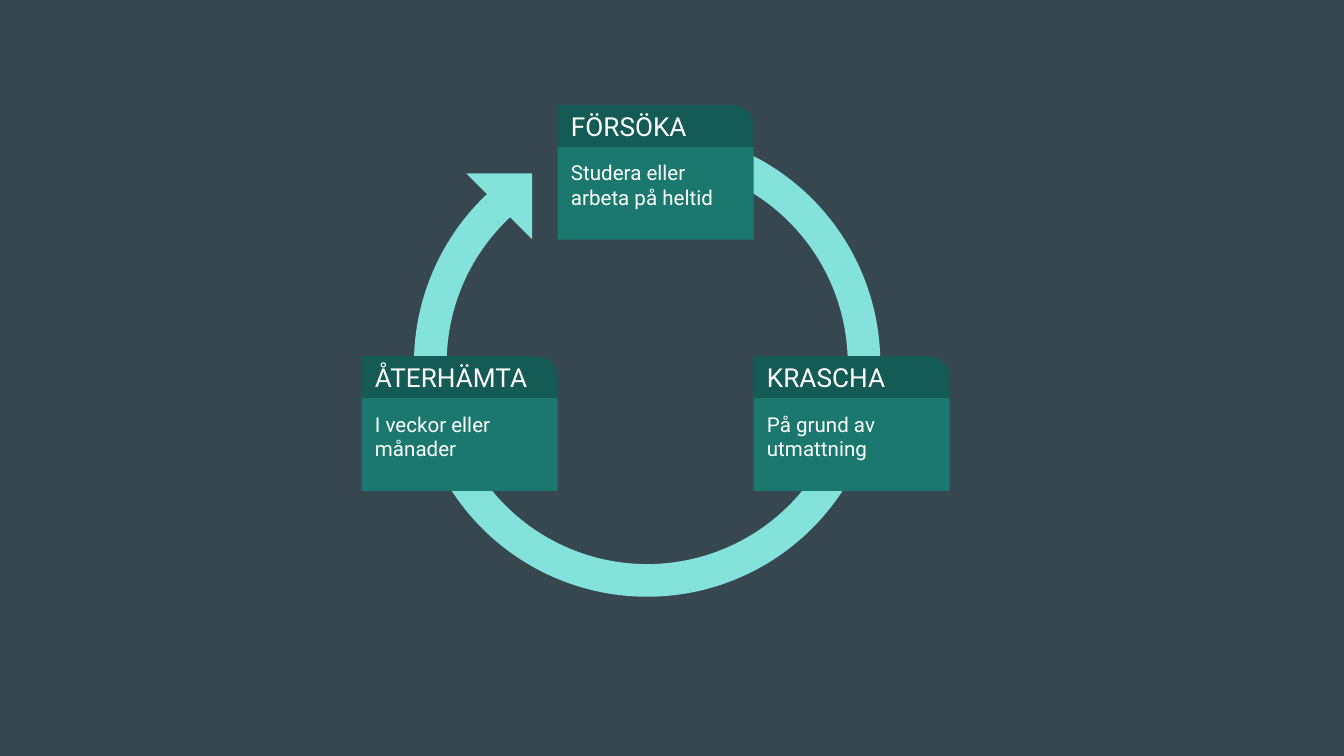
import pptx
import pptx.dml.color
import pptx.enum.shapes
import pptx.enum.text
import pptx.util

RGBColor = pptx.dml.color.RGBColor
Inches = pptx.util.Inches
SHAPES = pptx.enum.shapes.MSO_SHAPE
ANCHOR = pptx.enum.text.MSO_ANCHOR

SLATE = RGBColor(0x37, 0x47, 0x4F)
MINT = RGBColor(0x83, 0xE3, 0xDA)
TEAL = RGBColor(0x1B, 0x78, 0x6F)
DARK_TEAL = RGBColor(0x15, 0x5B, 0x55)
WHITE = RGBColor(0xFF, 0xFF, 0xFF)

FONT = "Roboto"
SLIDE_WIDTH = 10
SLIDE_HEIGHT = SLIDE_WIDTH * 9 / 16
MIDDLE_LEFT, GRID_TOP = 4.15, 0.78
CARD_WIDTH, ROW_STEP = SLIDE_WIDTH * 7 / 48, 1.87
HEADER_HEIGHT, BODY_HEIGHT = SLIDE_HEIGHT / 18, 0.69
RING_LEFT, RING_TOP, RING_SIZE = 3.08, 0.97, 3.47
HEAD_LEFT, HEAD_TOP, HEAD_SIZE = 3.47, 1.29, 0.49
ANGLE_UNIT = 0.6

CARDS = [
    ("KRASCHA", "På grund av utmattning", 1, 1),
    ("FÖRSÖKA", "Studera eller arbeta på heltid", 0, 0),
    ("ÅTERHÄMTA", "I veckor eller månader", -1, 1),
]


def add_filled_shape(group, kind, left, top, width, height, color):
    shape = group.shapes.add_shape(
        kind, Inches(left), Inches(top), Inches(width), Inches(height)
    )
    shape.shadow.inherit = False
    shape.fill.solid()
    shape.fill.fore_color.rgb = color
    shape.line.fill.background()
    return shape


def write_text(shape, text, *, size, anchor=ANCHOR.TOP, color=WHITE, margin=0.1):
    frame = shape.text_frame
    frame.word_wrap = True
    frame.vertical_anchor = anchor
    frame.margin_left = frame.margin_right = Inches(margin)
    frame.margin_top = frame.margin_bottom = Inches(margin)
    paragraph = frame.paragraphs[0]
    paragraph.alignment = pptx.enum.text.PP_ALIGN.LEFT
    run = paragraph.add_run()
    run.text = text
    run.font.name = FONT
    run.font.size = pptx.util.Pt(size)
    run.font.color.rgb = color


def add_cycle_arrow(slide):
    group = slide.shapes.add_group_shape()
    ring = add_filled_shape(
        group, SHAPES.BLOCK_ARC, RING_LEFT, RING_TOP, RING_SIZE, RING_SIZE, MINT
    )
    ring.adjustments[0] = 90 * ANGLE_UNIT
    ring.adjustments[1] = 50.21 * ANGLE_UNIT
    ring.adjustments[2] = 0.07
    head = add_filled_shape(
        group, SHAPES.RIGHT_TRIANGLE, HEAD_LEFT, HEAD_TOP, HEAD_SIZE, HEAD_SIZE, MINT
    )
    ring.rotation = head.rotation = 180


def add_card(slide, title, description, column, row):
    left = MIDDLE_LEFT + column * CARD_WIDTH
    top = GRID_TOP + row * ROW_STEP
    group = slide.shapes.add_group_shape()
    body = add_filled_shape(
        group, SHAPES.RECTANGLE, left, top + HEADER_HEIGHT, CARD_WIDTH, BODY_HEIGHT, TEAL
    )
    write_text(body, description, size=11)
    header = add_filled_shape(
        group, SHAPES.ROUND_1_RECTANGLE, left, top, CARD_WIDTH, HEADER_HEIGHT, DARK_TEAL
    )
    header.adjustments[0] = 0.5
    write_text(header, title, size=14, anchor=ANCHOR.MIDDLE)


def main():
    presentation = pptx.Presentation()
    presentation.slide_width = Inches(SLIDE_WIDTH)
    presentation.slide_height = Inches(SLIDE_HEIGHT)
    slide = presentation.slides.add_slide(presentation.slide_layouts[6])
    slide.background.fill.solid()
    slide.background.fill.fore_color.rgb = SLATE
    add_cycle_arrow(slide)
    for title, description, column, row in CARDS:
        add_card(slide, title, description, column, row)
    presentation.save("out.pptx")


if __name__ == "__main__":
    main()
